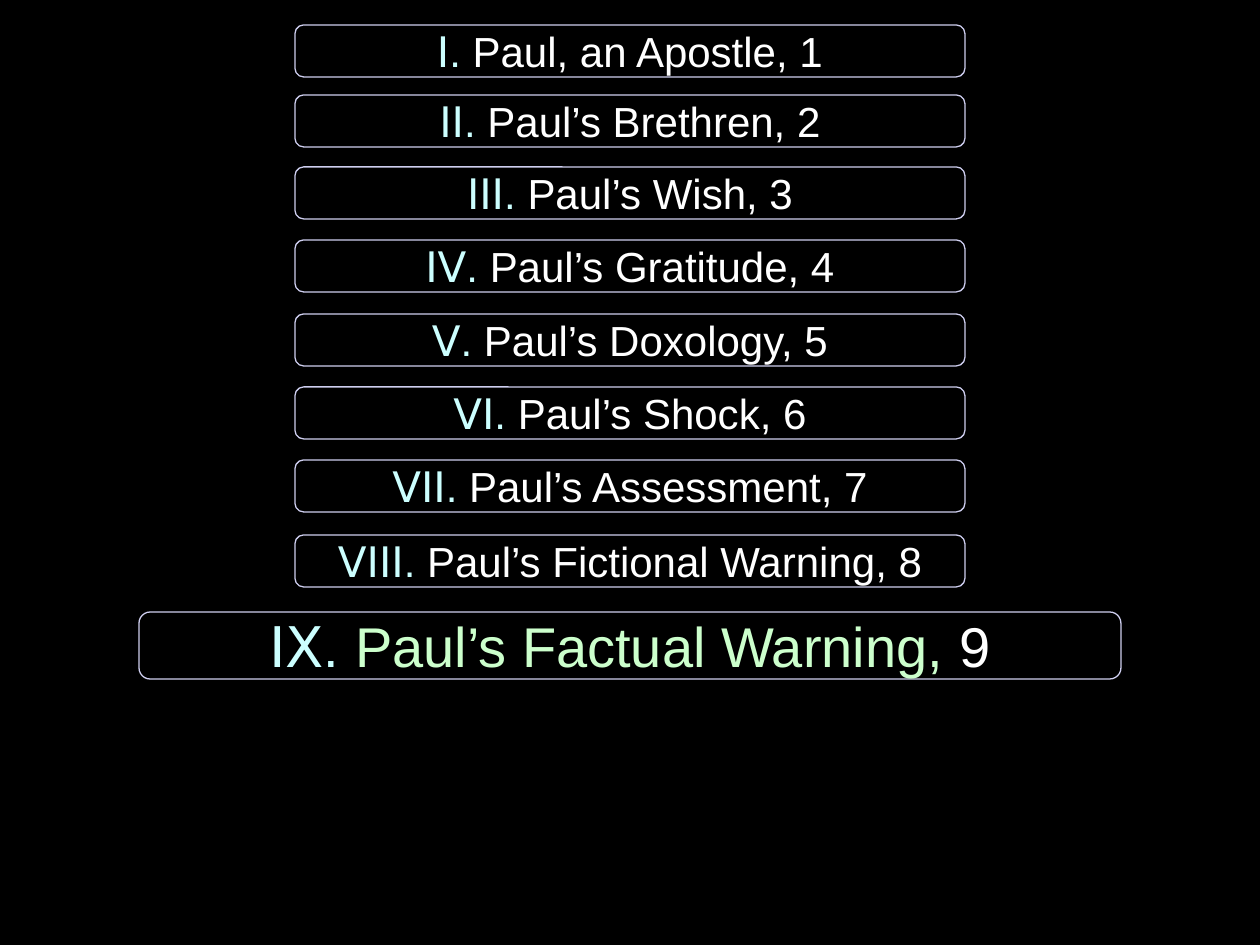
from dataclasses import dataclass

from pptx import Presentation
from pptx.dml.color import RGBColor
from pptx.enum.shapes import MSO_SHAPE
from pptx.enum.text import MSO_ANCHOR, PP_ALIGN
from pptx.util import Emu, Pt

SCALE = 914400 // 126


@dataclass(frozen=True)
class Theme:
    background: str = "000000"
    outline: str = "CECEEF"
    numeral: str = "CCFFFF"
    text: str = "FFFFFF"
    highlight: str = "CCFFCC"
    numeral_font: str = "DejaVu Sans"
    text_font: str = "Arial"
    item_size: int = 24
    current_size: int = 32
    outline_width: float = 0.75


THEME = Theme()
SLIDE_WIDTH, SLIDE_HEIGHT = 1260, 945
ITEM_WIDTH, ITEM_HEIGHT = 670, 52
CURRENT_WIDTH, CURRENT_HEIGHT = 982, 67
CURRENT_TOP = 612

OUTLINE_ITEMS = [
    (25, "I", "Paul, an Apostle, 1"),
    (95, "II", "Paul’s Brethren, 2"),
    (167, "III", "Paul’s Wish, 3"),
    (240, "IV", "Paul’s Gratitude, 4"),
    (314, "V", "Paul’s Doxology, 5"),
    (387, "VI", "Paul’s Shock, 6"),
    (460, "VII", "Paul’s Assessment, 7"),
    (535, "VIII", "Paul’s Fictional Warning, 8"),
]


def px(length):
    return Emu(length * SCALE)


def color(value):
    return RGBColor.from_string(value)


def set_background(page):
    fill = page.background.fill
    fill.solid()
    fill.fore_color.rgb = color(THEME.background)


def add_span(para, text, size, font_name, font_color):
    span = para.add_run()
    span.text = text
    span.font.size = Pt(size)
    span.font.name = font_name
    span.font.color.rgb = color(font_color)


def add_heading(page, top, width, height, size, numeral, parts):
    left = (SLIDE_WIDTH - width) // 2
    box = page.shapes.add_shape(
        MSO_SHAPE.ROUNDED_RECTANGLE, px(left), px(top), px(width), px(height)
    )
    box.shadow.inherit = False
    box.fill.solid()
    box.fill.fore_color.rgb = color(THEME.background)
    box.line.color.rgb = color(THEME.outline)
    box.line.width = Pt(THEME.outline_width)
    box.text_frame.vertical_anchor = MSO_ANCHOR.MIDDLE
    para = box.text_frame.paragraphs[0]
    para.alignment = PP_ALIGN.CENTER
    add_span(para, numeral, size, THEME.numeral_font, THEME.numeral)
    add_span(para, ". ", size, THEME.text_font, THEME.numeral)
    for text, font_color in parts:
        add_span(para, text, size, THEME.text_font, font_color)


def main():
    deck = Presentation()
    deck.slide_width, deck.slide_height = px(SLIDE_WIDTH), px(SLIDE_HEIGHT)
    page = deck.slides.add_slide(deck.slide_layouts[6])
    set_background(page)
    for top, numeral, title in OUTLINE_ITEMS:
        add_heading(page, top, ITEM_WIDTH, ITEM_HEIGHT, THEME.item_size,
                    numeral, [(title, THEME.text)])
    add_heading(page, CURRENT_TOP, CURRENT_WIDTH, CURRENT_HEIGHT, THEME.current_size,
                "IX", [("Paul’s Factual Warning, ", THEME.highlight), ("9", THEME.text)])
    deck.save("out.pptx")


if __name__ == "__main__":
    main()
